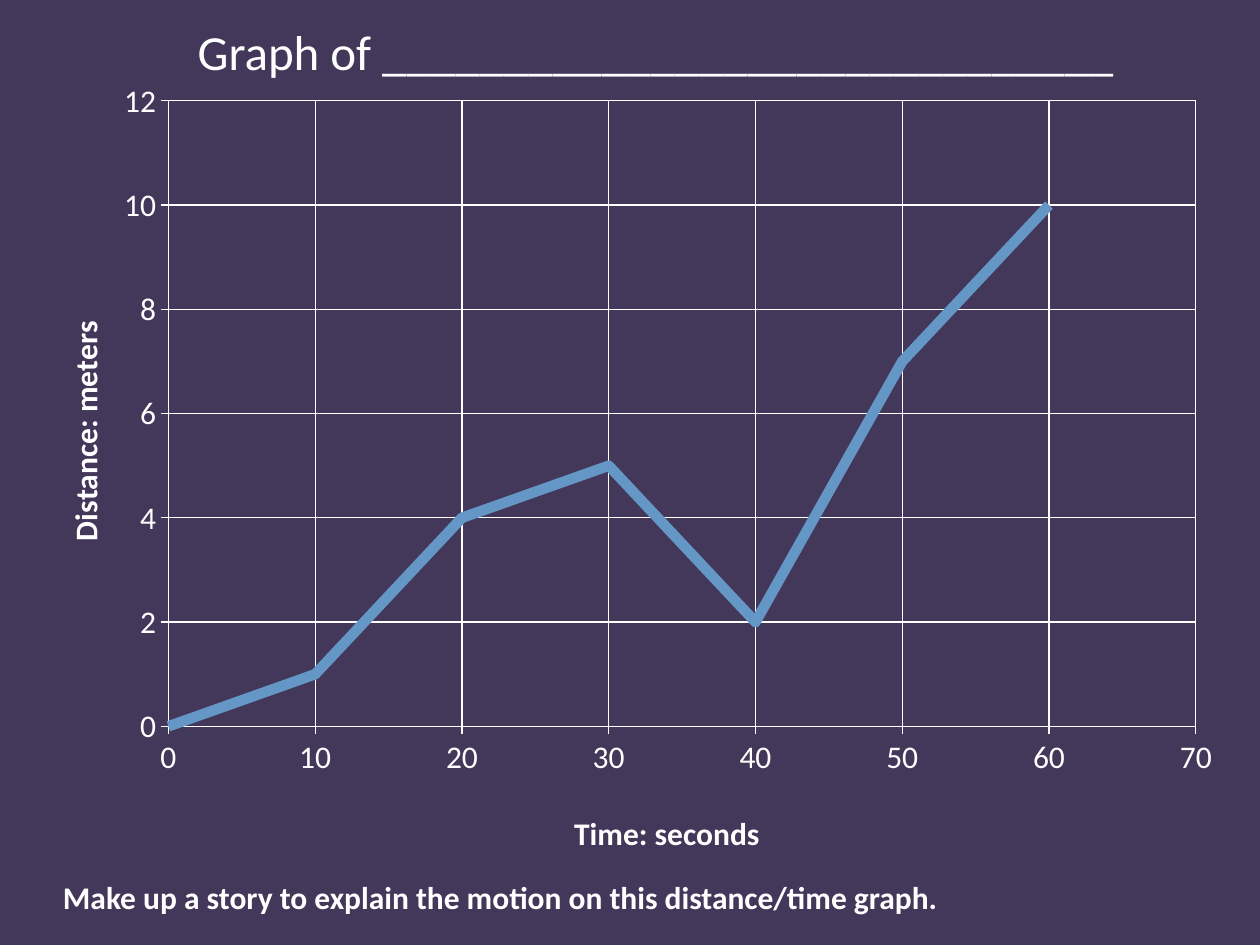
from lxml.etree import SubElement
from pptx import Presentation
from pptx.chart.data import XyChartData
from pptx.dml.color import RGBColor
from pptx.enum.chart import XL_CHART_TYPE as ChartType, XL_MARKER_STYLE as Marker
from pptx.enum.chart import XL_TICK_MARK as Tick
from pptx.enum.text import MSO_ANCHOR as Anchor, MSO_AUTO_SIZE as AutoSize, PP_ALIGN as Align
from pptx.oxml.ns import qn
from pptx.util import Cm, Pt

COLORS = {"background": "43375A", "text": "FFFFFF", "motion": "6496C6"}
FONT = "Calibri"
TIMES = range(0, 70, 10)
DISTANCES = (0, 1, 4, 5, 2, 7, 10)


def color(name):
    return RGBColor.from_string(COLORS[name])


def style_font(font, size, bold=False):
    font.name = FONT
    font.size = Pt(size)
    font.bold = bold
    font.color.rgb = color("text")


def write_line(shape, text, size, bold=False, wrap=True):
    frame = shape.text_frame
    frame.text = text
    frame.word_wrap = wrap
    frame.auto_size = AutoSize.SHAPE_TO_FIT_TEXT
    frame.vertical_anchor = Anchor.TOP
    frame.paragraphs[0].alignment = Align.LEFT
    style_font(frame.paragraphs[0].runs[0].font, size, bold)


def set_layout(layout, **fractions):
    """Fix a chart part at fractions of the chart's width and height."""
    for child in list(layout):
        layout.remove(child)
    manual = SubElement(layout, qn("c:manualLayout"))
    if "w" in fractions:
        SubElement(manual, qn("c:layoutTarget")).set("val", "inner")
    for mode in ("xMode", "yMode"):
        SubElement(manual, qn(f"c:{mode}")).set("val", "edge")
    for key, value in fractions.items():
        SubElement(manual, qn(f"c:{key}")).set("val", str(value))


def style_axis(axis, title, top, step, x, y, rotation):
    axis.minimum_scale, axis.maximum_scale, axis.major_unit = 0, top, step
    axis.major_tick_mark, axis.minor_tick_mark = Tick.OUTSIDE, Tick.NONE
    axis.has_major_gridlines = True
    for line in (axis.format.line, axis.major_gridlines.format.line):
        line.color.rgb = color("text")
        line.width = Pt(0.75)
    style_font(axis.tick_labels.font, 18)
    axis.tick_labels.number_format = "General"
    axis.tick_labels.number_format_is_linked = False

    frame = axis.axis_title.text_frame
    frame.text = title
    style_font(frame.paragraphs[0].runs[0].font, 18, bold=True)
    frame._txBody.bodyPr.set("rot", str(rotation * 60000))
    title_xml = axis.axis_title._element
    layout = title_xml.find(qn("c:layout"))
    if layout is None:
        layout = SubElement(title_xml, qn("c:layout"))
        title_xml.find(qn("c:tx")).addnext(layout)
    set_layout(layout, x=x, y=y)


def add_motion_chart(slide):
    data = XyChartData()
    motion = data.add_series("Series 1")
    for time, distance in zip(TIMES, DISTANCES):
        motion.add_data_point(time, distance)
    chart = slide.shapes.add_chart(
        ChartType.XY_SCATTER_SMOOTH_NO_MARKERS,
        Cm(0.43), Cm(1.32), Cm(24.51), Cm(16.23), data).chart
    chart.has_legend = chart.has_title = False
    style_font(chart.font, 18)

    plot = chart.plots[0]
    plot.vary_by_categories = False
    curve = plot.series[0]
    curve.smooth = True
    curve.marker.style = Marker.NONE
    curve.format.line.color.rgb = color("motion")
    curve.format.line.width = Pt(6)

    style_axis(chart.category_axis, "Time: seconds", 70, 10, 0.45, 0.92, 0)
    style_axis(chart.value_axis, "Distance: meters", 12, 2, 0.03, 0.31, -90)

    plot_area = chart._chartSpace.chart.plotArea
    layout = plot_area.find(qn("c:layout"))
    if layout is None:
        layout = SubElement(plot_area, qn("c:layout"))
        plot_area.insert(0, layout)
    set_layout(layout, x=0.121, y=0.044, w=0.845, h=0.777)


def main():
    deck = Presentation()
    deck.slide_width, deck.slide_height = Cm(25.4), Cm(19.05)
    slide = deck.slides.add_slide(deck.slide_layouts[5])
    slide.background.fill.solid()
    slide.background.fill.fore_color.rgb = color("background")

    add_motion_chart(slide)

    task = slide.shapes.add_textbox(Cm(1.02), Cm(17.58), Cm(21.03), Cm(1.02))
    write_line(task, "Make up a story to explain the motion on this distance/time graph.",
               18, bold=True)

    title = slide.shapes.title
    title.left, title.top, title.width, title.height = Cm(3.73), Cm(0.3), Cm(19.2), Cm(1.45)
    write_line(title, "Graph of " + "_" * 30, 28, wrap=False)

    deck.save("out.pptx")


if __name__ == "__main__":
    main()
